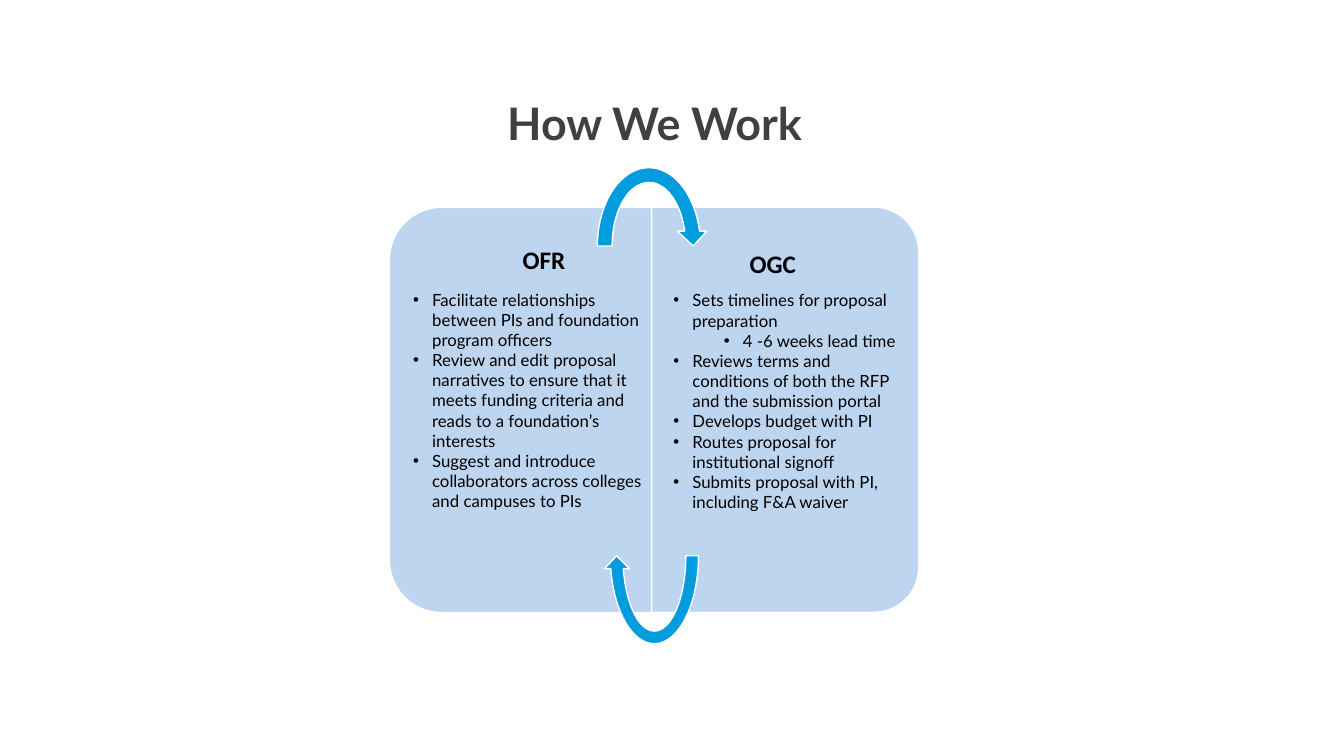
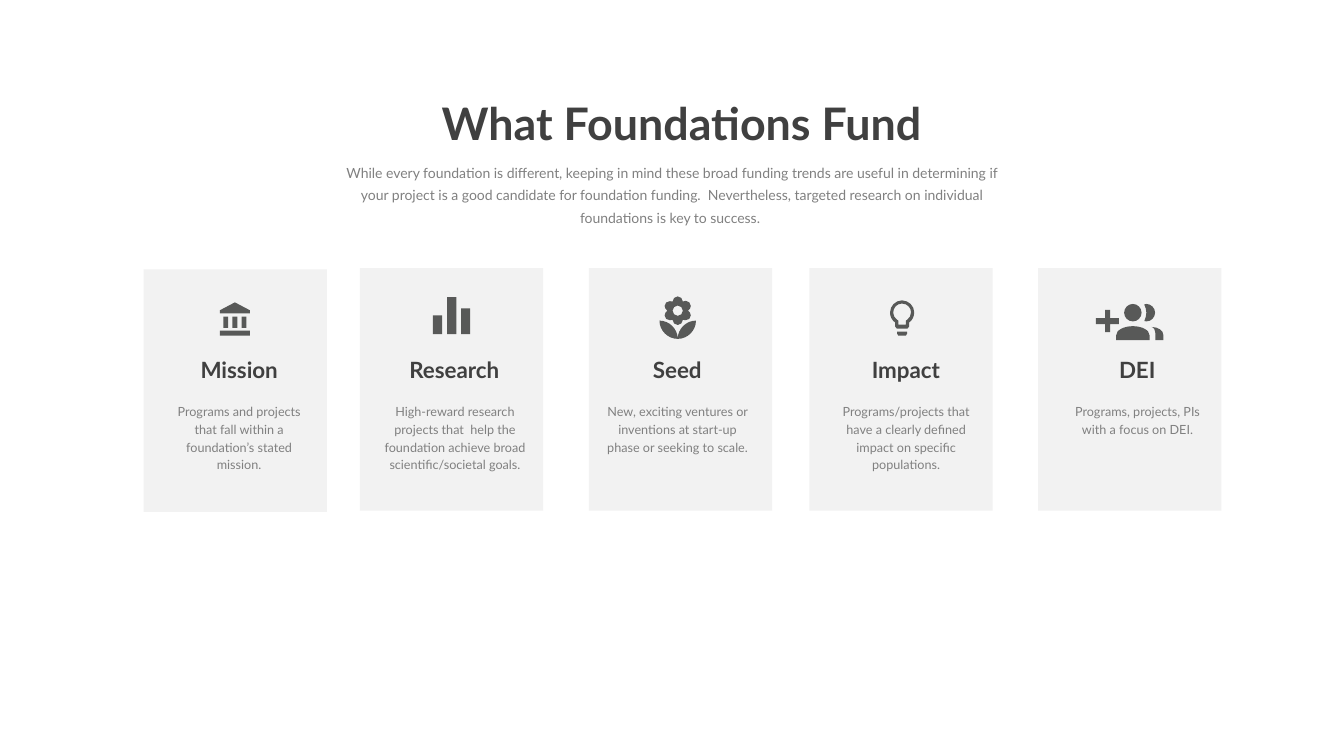
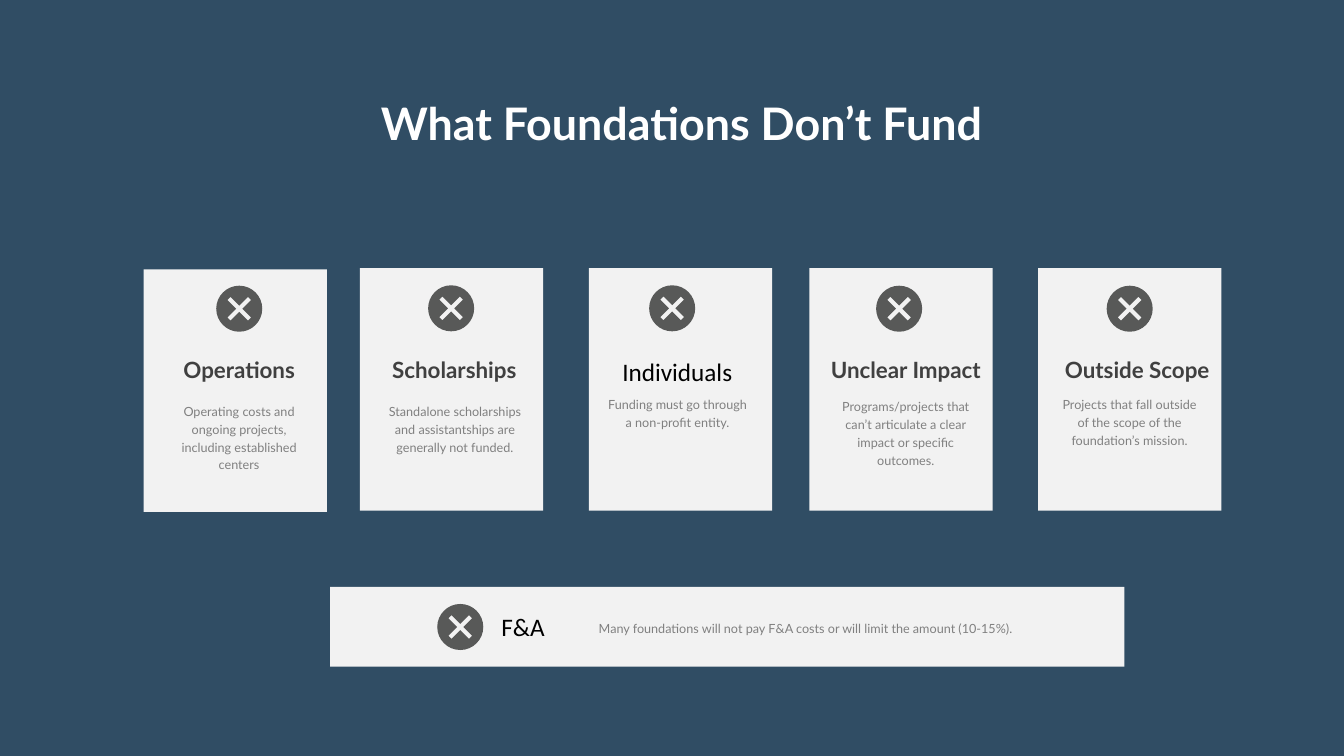
from math import cos, radians, sin, tan

from lxml import etree
from pptx import Presentation
from pptx.dml.color import RGBColor
from pptx.enum import shapes, text
from pptx.oxml import ns
from pptx.util import Cm, Pt

WHITE = RGBColor(0xFF, 0xFF, 0xFF)
BLACK = RGBColor(0, 0, 0)
NAVY = RGBColor(0x30, 0x4D, 0x64)
PANEL_BLUE = RGBColor(0xBD, 0xD5, 0xEF)
ARROW_BLUE = RGBColor(0x00, 0x9C, 0xDE)
CARD_GRAY = RGBColor(0xF2, 0xF2, 0xF2)
ICON_GRAY = RGBColor(0x58, 0x59, 0x58)
HEADING_GRAY = RGBColor(0x40, 0x40, 0x40)
TEXT_GRAY = RGBColor(0x80, 0x80, 0x80)

TITLE = ("Lato", 32, True, HEADING_GRAY)
TITLE_LIGHT = ("Lato", 32, True, WHITE)
OFFICE = ("Calibri", 18, True, BLACK)
BULLET = ("Lato", 12, False, BLACK)
INTRO = ("Lato", 10, False, TEXT_GRAY)
LABEL = ("Lato", 16, True, HEADING_GRAY)
LABEL_PLAIN = ("Calibri", 18, False, BLACK)
DETAIL = ("Lato", 9, False, TEXT_GRAY)

CENTER, LEFT = text.PP_ALIGN.CENTER, text.PP_ALIGN.LEFT
TITLE_BOX = (8.67, 2.29, 17.02, 1.63)

PANELS = [((8.66, 6.38, 10.21, 7.9), 270), ((14.68, 6.96, 10.21, 6.73), 90)]
ARROWS = [((14.87, 4.04, 2.97, 4.32), 0), ((15.22, 11.63, 2.54, 4.75), 180)]
OFFICES = [
    ("OFR", (12.92, 6.02, 1.6, 1.02), (10.16, 7.16, 6.55, 5.89), [
        (0, "Facilitate relationships between PIs and foundation program officers"),
        (0, "Review and edit proposal narratives to ensure that it meets funding "
            "criteria and reads to a foundation’s interests"),
        (0, "Suggest and introduce collaborators across colleges and campuses to PIs"),
    ]),
    ("OGC", (18.64, 6.13, 1.7, 1.02), (16.72, 7.18, 6.15, 5.89), [
        (0, "Sets timelines for proposal preparation"),
        (1, "4 -6 weeks lead time"),
        (0, "Reviews terms and conditions of both the RFP and the submission portal"),
        (0, "Develops budget with PI"),
        (0, "Routes proposal for institutional signoff"),
        (0, "Submits proposal with PI, including F&A waiver"),
    ]),
]

INTRO_TEXT = ("While every foundation is different, keeping in mind these broad funding "
              "trends are useful in determining if your project is a good candidate for "
              "foundation funding.  Nevertheless, targeted research on individual "
              "foundations is key to success. ")

CARD_SIZE = (4.62, 6.11)
CARD_SPOTS = [(3.62, 6.79), (9.07, 6.76), (14.84, 6.76), (20.4, 6.76), (26.16, 6.76)]
LABEL_LEFTS = [3.53, 8.95, 14.57, 20.33, 26.16]

FUNDED = [
    ("Mission", LABEL, "Programs and projects that fall within a foundation’s stated mission.",
     4, (3.98, 9.97), "bank", (5.54, 7.62)),
    ("Research", LABEL, "High-reward research projects that  help the foundation achieve "
     "broad scientific/societal goals.", 4, (9.42, 9.97), "bars", (10.91, 7.49)),
    ("Seed", LABEL, "New, exciting ventures or inventions at start-up phase or seeking "
     "to scale.", 3, (15.03, 9.97), "flower", (16.62, 7.47)),
    ("Impact", LABEL, "Programs/projects that have a clearly defined impact on specific "
     "populations.", 4, (20.79, 9.97), "bulb", (22.43, 7.57)),
    ("DEI", LABEL, "Programs, projects, PIs with a focus on DEI.",
     2, (26.62, 9.97), "people", (27.62, 7.66)),
]
NOT_FUNDED = [
    ("Operations", LABEL, "Operating costs and ongoing projects, including established centers",
     4, (3.98, 9.97), "cross", (5.45, 7.2)),
    ("Scholarships", LABEL, "Standalone scholarships and assistantships are generally not "
     "funded.", 3, (9.42, 9.97), "cross", (10.79, 7.19)),
    ("Individuals", LABEL_PLAIN, "Funding must go through a non-profit entity.",
     2, (15.03, 9.8), "cross", (16.36, 7.19)),
    ("Unclear Impact", LABEL, "Programs/projects that can’t articulate a clear impact or "
     "specific outcomes.", 4, (20.78, 9.86), "cross", (22.08, 7.2)),
    ("Outside Scope", LABEL, "Projects that fall outside of the scope of the foundation’s "
     "mission.", 3, (26.42, 9.81), "cross", (27.89, 7.2)),
]


def arc(cx, cy, rx, ry, start, end):
    turns = [a for a in range(-360, 721, 90) if min(start, end) < a < max(start, end)]
    stops = [radians(a) for a in [start] + (turns if start < end else turns[::-1]) + [end]]
    segments = [(cx + rx * cos(stops[0]), cy + ry * sin(stops[0]))]
    for a, b in zip(stops, stops[1:]):
        pull = 4 / 3 * tan((b - a) / 4)
        segments.append((
            cx + rx * (cos(a) - pull * sin(a)), cy + ry * (sin(a) + pull * cos(a)),
            cx + rx * (cos(b) + pull * sin(b)), cy + ry * (sin(b) - pull * cos(b)),
            cx + rx * cos(b), cy + ry * sin(b)))
    return segments


def circle(cx, cy, r):
    return arc(cx, cy, r, r, 0, 360)


def box(left, top, right, bottom):
    return [(left, top), (right, top), (right, bottom), (left, bottom)]


def cross_outline(center):
    points = [(8, 0), (30, 22), (22, 30)]
    outline = []
    for _ in range(4):
        outline += [(center + x, center + y) for x, y in points]
        points = [(-y, x) for x, y in points]
    return outline


def petals(cx, cy, reach, r):
    outline = []
    for a in range(30, 390, 60):
        px, py = cx + reach * cos(radians(a)), cy + reach * sin(radians(a))
        outline += arc(px, py, r, r, a - 90, a + 90)
    return outline


ICONS = {
    "bank": [[(38, 0), (76, 20), (76, 28), (0, 28), (0, 20)], box(0, 71, 76, 84)]
            + [box(x, 36, x + 12, 64) for x in (9, 32, 55)],
    "bars": [box(x, top, x + 23, 93) for x, top in ((0, 46), (36, 0), (71, 28))],
    "flower": [
        petals(46, 36, 23, 13),
        circle(46, 36, 13),
        arc(46, 61, 46, 46, 90, 180) + arc(0, 107, 46, 46, 270, 360)[1:],
        arc(92, 107, 46, 46, 180, 270) + arc(46, 61, 46, 46, 0, 90)[1:],
    ],
    "bulb": [
        arc(30.5, 30.5, 30.5, 30.5, 124, 416)
        + [(48, 66), (44, 71), (17, 71), (13, 66)],
        arc(30.5, 30.5, 22.5, 22.5, 125, 415)
        + [(40, 51), (40, 61), (21, 61), (21, 51)],
        [(18, 79), (43, 79), (43, 84), (40, 89), (21, 89), (18, 84)],
    ],
    "people": [
        [(58, 36), (58, 51), (36, 51), (36, 71), (23, 71), (23, 51),
         (0, 51), (0, 36), (23, 36), (23, 15), (36, 15), (36, 36)],
        circle(93, 22, 22),
        arc(93, 79, 42, 23, 180, 360) + [(135, 91), (51, 91)],
        arc(127, 22, 22, 22, -104, 104) + arc(84.5, 22, 42.5, 42.5, 28, -28)[1:],
        arc(140, 79, 30, 21, 270, 360) + [(170, 91), (150, 91)]
        + arc(140, 79, 10, 21, 360, 270),
    ],
    "cross": [cross_outline(58), circle(58, 58, 58)],
}


def place(shape, spot):
    shape.left, shape.top, shape.width, shape.height = [Cm(v) for v in spot]


def prepare(frame, wrap=True):
    frame.word_wrap = wrap
    frame.auto_size = text.MSO_AUTO_SIZE.SHAPE_TO_FIT_TEXT
    frame.vertical_anchor = text.MSO_ANCHOR.TOP
    frame.margin_left = frame.margin_right = Cm(0.25)
    frame.margin_top = frame.margin_bottom = Cm(0.13)


def add_run(paragraph, words, style):
    run = paragraph.add_run()
    run.text = words
    run.font.name, size, run.font.bold, run.font.color.rgb = style
    run.font.size = Pt(size)


def add_text(slide, words, spot, style, align=LEFT, spacing=None, wrap=True):
    frame = slide.shapes.add_textbox(*[Cm(v) for v in spot]).text_frame
    prepare(frame, wrap)
    paragraph = frame.paragraphs[0]
    paragraph.alignment = align
    if spacing:
        paragraph.line_spacing = Pt(spacing)
    add_run(paragraph, words, style)


def add_title(slide, words, spot=TITLE_BOX, style=TITLE):
    title = slide.shapes.title
    place(title, spot)
    prepare(title.text_frame)
    paragraph = title.text_frame.paragraphs[0]
    paragraph.alignment = CENTER
    add_run(paragraph, words, style)


def fill_list(slide, body, spot, items):
    place(body, spot)
    slide.shapes.element.append(body.element)
    frame = body.text_frame
    prepare(frame)
    for i, (level, words) in enumerate(items):
        paragraph = frame.add_paragraph() if i else frame.paragraphs[0]
        paragraph.level = level
        paragraph.space_before = Pt(0)
        properties = paragraph._p.get_or_add_pPr()
        properties.set("marL", str(Cm(0.48 + 1.27 * level)))
        properties.set("indent", str(-Cm(0.48)))
        etree.SubElement(properties, ns.qn("a:buFont")).set("typeface", "Arial")
        etree.SubElement(properties, ns.qn("a:buChar")).set("char", "•")
        add_run(paragraph, words, BULLET)


def paint(shape, fill, outline=None):
    shape.shadow.inherit = False
    shape.fill.solid()
    shape.fill.fore_color.rgb = fill
    if outline is None:
        shape.line.fill.background()
    else:
        shape.line.color.rgb = outline
        shape.line.width = Pt(1)


def add_preset(slide, kind, spot, fill, outline=None, rotation=0):
    shape = slide.shapes.add_shape(kind, *[Cm(v) for v in spot])
    shape.rotation = rotation
    paint(shape, fill, outline)


def bend(icon, contours):
    lines = iter(list(icon.element.iter(ns.qn("a:lnTo"))))
    for segment in [s for contour in contours for s in contour[1:]]:
        line = next(lines)
        if len(segment) == 6:
            curve = etree.Element(ns.qn("a:cubicBezTo"))
            line.addprevious(curve)
            for part in (line, next(lines), next(lines)):
                curve.append(part[0])
                part.getparent().remove(part)


def add_icon(slide, name, spot):
    contours = ICONS[name]
    outline = slide.shapes.build_freeform(*contours[0][0], scale=Cm(0.01))
    for i, (start, *segments) in enumerate(contours):
        if i:
            outline.move_to(*start)
        points = [p for s in segments for p in zip(s[::2], s[1::2])]
        outline.add_line_segments(points, close=True)
    icon = outline.convert_to_shape(*[Cm(v) for v in spot])
    bend(icon, contours)
    paint(icon, ICON_GRAY)


def add_cards(slide, cards):
    for spot in CARD_SPOTS:
        add_preset(slide, shapes.MSO_SHAPE.RECTANGLE, spot + CARD_SIZE, CARD_GRAY)
    for label_left, card in zip(LABEL_LEFTS, cards):
        label, label_style, detail, lines, detail_spot, icon, icon_spot = card
        add_text(slide, label, (label_left, 8.84, 5, 0.94), label_style, CENTER)
        detail_size = (4.09, 0.25 + 0.45 * lines)
        add_text(slide, detail, detail_spot + detail_size, DETAIL, CENTER, 12.8)
        add_icon(slide, icon, icon_spot)


def build_how_we_work(deck):
    slide = deck.slides.add_slide(deck.slide_layouts[3])
    add_title(slide, "How We Work", (7.3, 2.29, 18.39, 1.63))
    for spot, rotation in PANELS:
        add_preset(slide, shapes.MSO_SHAPE.ROUND_2_SAME_RECTANGLE, spot,
                   PANEL_BLUE, WHITE, rotation)
    for spot, rotation in ARROWS:
        add_preset(slide, shapes.MSO_SHAPE.CIRCULAR_ARROW, spot,
                   ARROW_BLUE, WHITE, rotation)
    bodies = [slide.placeholders[1], slide.placeholders[2]]
    for body, (office, office_spot, list_spot, duties) in zip(bodies, OFFICES):
        add_text(slide, office, office_spot, OFFICE, wrap=False)
        fill_list(slide, body, list_spot, duties)


def build_funded(deck):
    slide = deck.slides.add_slide(deck.slide_layouts[5])
    add_title(slide, "What Foundations Fund")
    add_text(slide, INTRO_TEXT, (8.18, 3.87, 17.5, 1.9), INTRO, CENTER, 16)
    add_cards(slide, FUNDED)


def build_not_funded(deck):
    slide = deck.slides.add_slide(deck.slide_layouts[5])
    slide.background.fill.solid()
    slide.background.fill.fore_color.rgb = NAVY
    add_title(slide, "What Foundations Don’t Fund", style=TITLE_LIGHT)
    add_cards(slide, NOT_FUNDED)
    add_preset(slide, shapes.MSO_SHAPE.RECTANGLE, (8.32, 14.79, 20.02, 2.01), CARD_GRAY)
    add_text(slide, "F&A", (10.68, 15.27, 5, 1.02), LABEL_PLAIN, CENTER)
    add_text(slide, "Many foundations will not pay F&A costs or will limit the amount (10-15%).",
             (14.84, 15.45, 14.6, 0.66), DETAIL, spacing=12.8)
    add_icon(slide, "cross", (11.02, 15.22))


def main():
    deck = Presentation()
    deck.slide_width, deck.slide_height = Cm(33.87), Cm(19.05)
    build_how_we_work(deck)
    build_funded(deck)
    build_not_funded(deck)
    deck.save("out.pptx")


if __name__ == "__main__":
    main()
